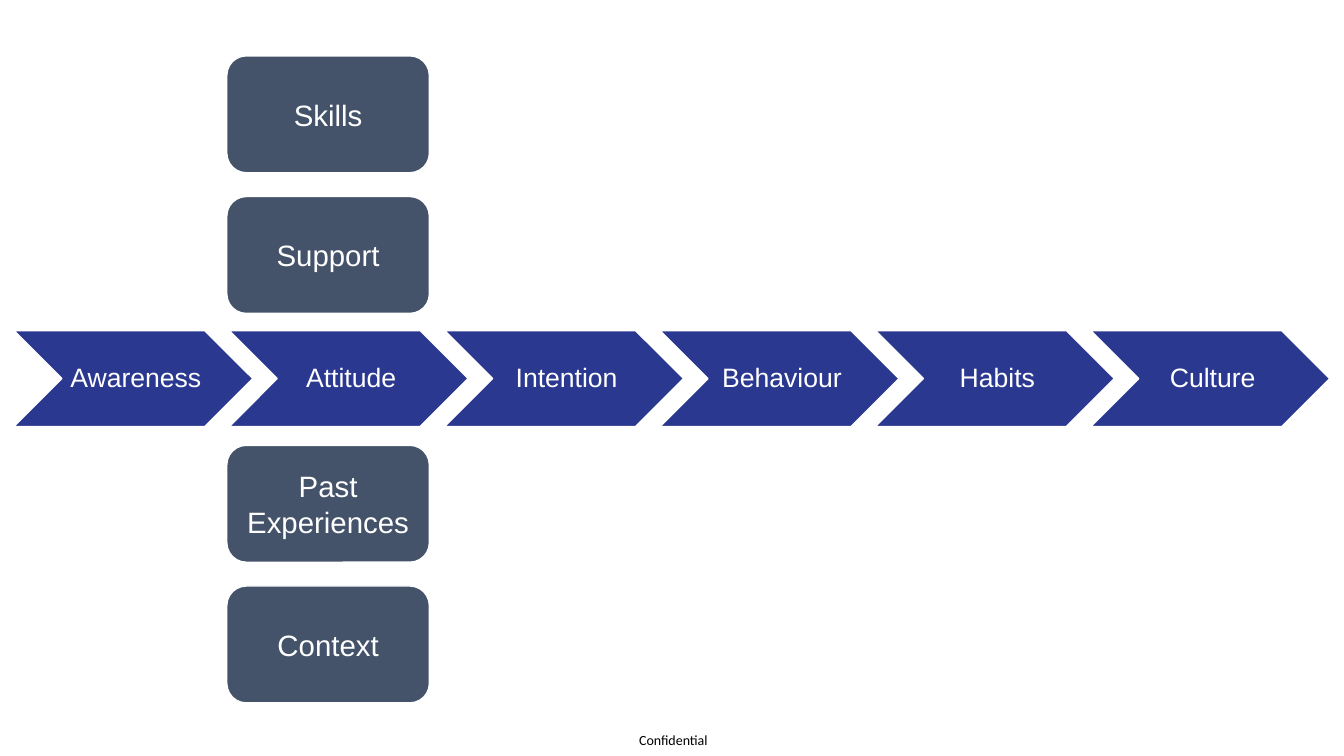
from dataclasses import dataclass
from pptx import Presentation
from pptx.dml.color import RGBColor
from pptx.enum.shapes import MSO_SHAPE as Kind
from pptx.enum.text import MSO_ANCHOR as Anchor, PP_ALIGN as Align
from pptx.shapes.base import BaseShape as Base
from pptx.slide import Slide
from pptx.util import Pt


@dataclass(frozen=True)
class Style:
    kind: Kind
    width: float
    height: float
    fill: str
    size: float
    inset: tuple[float, float, float, float]
    space: float = 1.0


@dataclass(frozen=True)
class Item:
    text: str
    left: float
    top: float
    style: Style


STEP = Style(Kind.CHEVRON, 170.6, 68.4, "2B3890", 19, (5.5, 2, 2, 2), 0.9)
CARD = Style(Kind.ROUNDED_RECTANGLE, 144.7, 83.5, "44536A", 21, (7.2, 3.6, 7.2, 3.6))
STEPS = ("Awareness", "Attitude", "Intention", "Behaviour", "Habits", "Culture")
STACKS = ((39.9, ("Skills", "Support")), (318.1, ("Past Experiences", "Context")))
STEP_GAP, CARD_GAP = 153.85, 100.5


def color(code: str) -> RGBColor:
    return RGBColor.from_string(code)


def write(shape: Base, text: str, face: str, size: float, code: str,
          inset: tuple[float, float, float, float], space: float = 1.0) -> None:
    frame = shape.text_frame
    frame.text = text
    line = frame.paragraphs[0]
    names = ("margin_left", "margin_top", "margin_right", "margin_bottom")
    form = {
        frame: {"word_wrap": True, "vertical_anchor": Anchor.MIDDLE,
                **{name: Pt(value) for name, value in zip(names, inset)}},
        line: {"alignment": Align.CENTER, "line_spacing": space},
        line.runs[0].font: {"name": face, "size": Pt(size)},
    }
    for part, values in form.items():
        for name, value in values.items():
            setattr(part, name, value)
    line.runs[0].font.color.rgb = color(code)


def draw(slide: Slide, item: Item) -> None:
    style = item.style
    shape = slide.shapes.add_shape(
        style.kind, Pt(item.left), Pt(item.top), Pt(style.width), Pt(style.height))
    shape.shadow.inherit = False
    shape.fill.solid()
    shape.fill.fore_color.rgb = color(style.fill)
    shape.line.color.rgb = color("FFFFFF")
    shape.line.width = Pt(1)
    write(shape, item.text, "Arial", style.size, "FFFFFF", style.inset, style.space)


def main() -> None:
    deck = Presentation()
    deck.slide_width, deck.slide_height = Pt(960), Pt(540)
    slide = deck.slides.add_slide(deck.slide_layouts[6])
    label = slide.shapes.add_textbox(Pt(455), Pt(522.7), Pt(52), Pt(12.2))
    write(label, "Confidential", "Calibri", 10, "000000", (0, 0, 0, 0))
    items = [Item(text, 10 + i * STEP_GAP, 236.2, STEP) for i, text in enumerate(STEPS)]
    items += [Item(text, 162, top + i * CARD_GAP, CARD)
              for top, texts in STACKS for i, text in enumerate(texts)]
    for item in items:
        draw(slide, item)
    deck.save("out.pptx")


if __name__ == "__main__":
    main()
